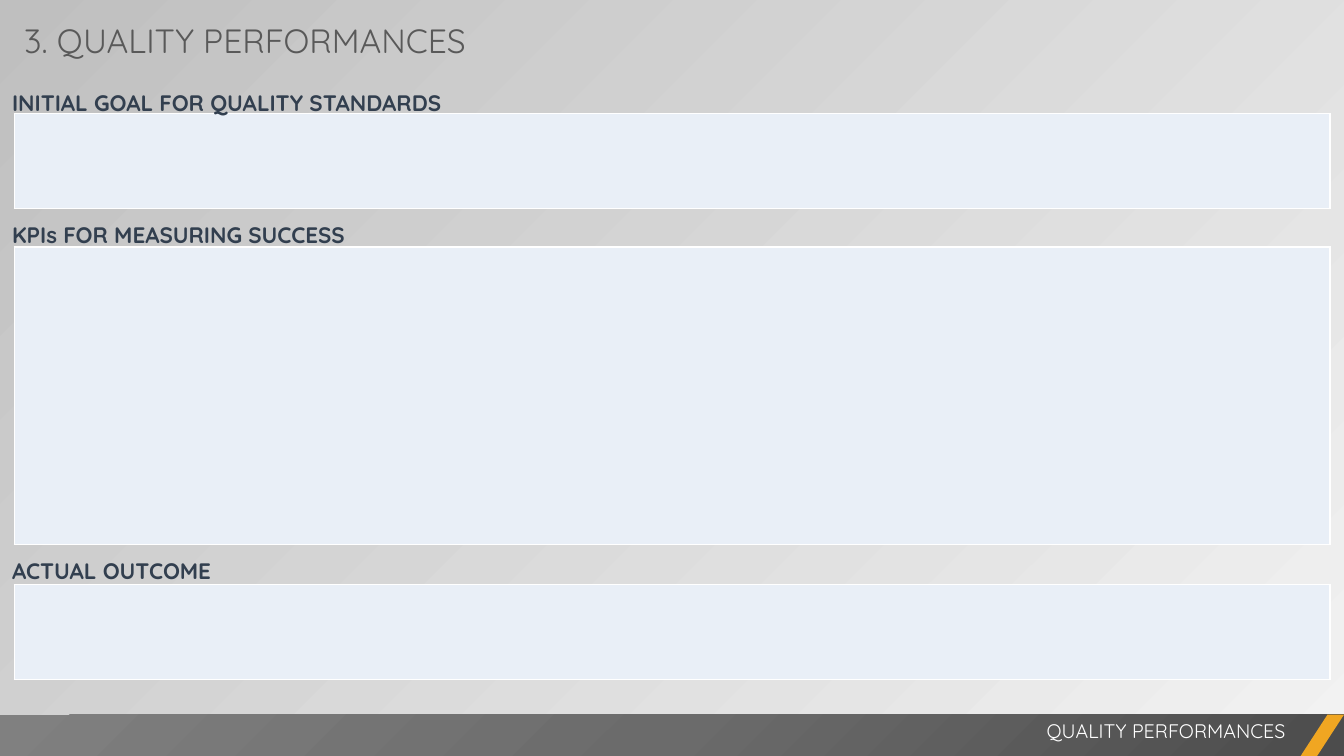
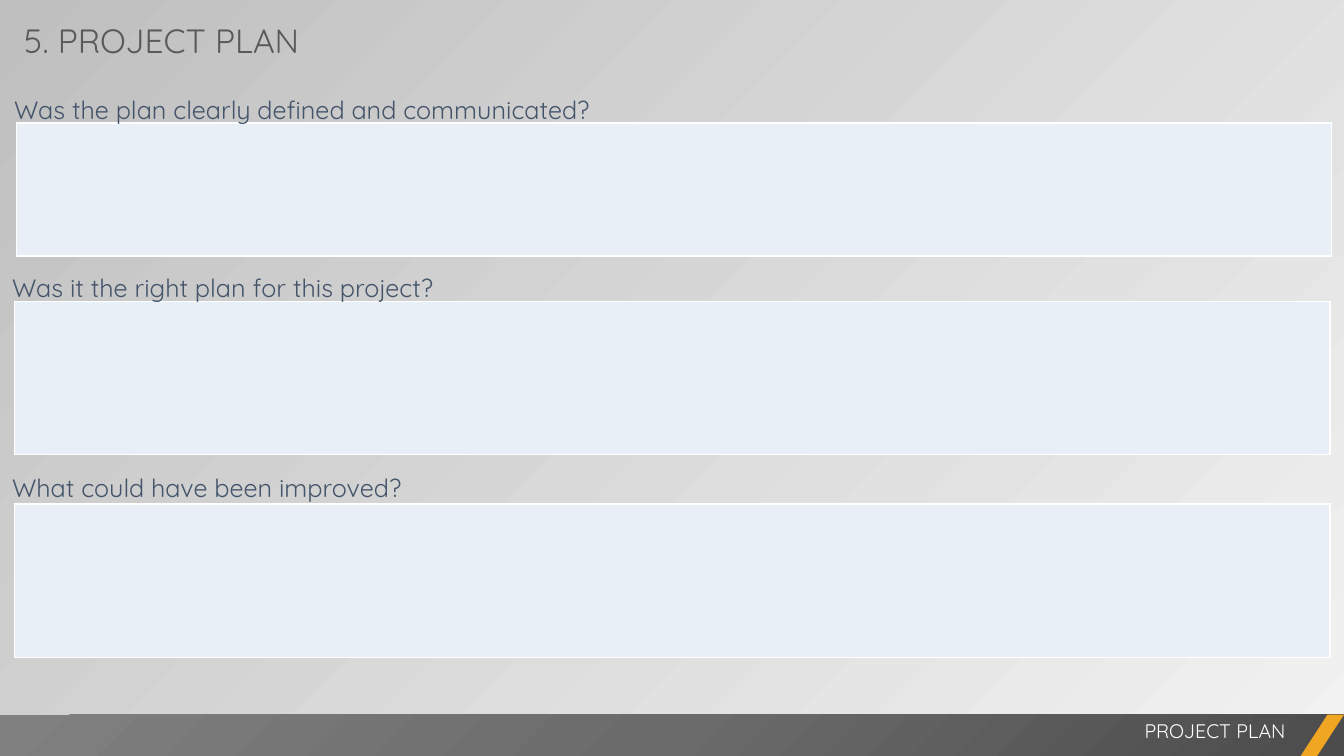
import dataclasses
import pptx
import pptx.util
import pptx.dml.color
import pptx.enum.shapes
import pptx.enum.text
import pptx.oxml
import pptx.oxml.ns

Inches = pptx.util.Inches
Pt = pptx.util.Pt
Fit = pptx.enum.text.MSO_AUTO_SIZE
Align = pptx.enum.text.PP_ALIGN
Form = pptx.enum.shapes.MSO_SHAPE


@dataclasses.dataclass(frozen=True)
class Theme:
    font: str = "Quicksand"
    light: str = "F2F2F2"
    dark: str = "BFBFBF"
    panel: str = "E9EFF7"
    white: str = "FFFFFF"
    title: str = "595959"
    accent: str = "F0A622"
    band: tuple = ((0, "4C4C4C"), (50, "6B6B6B"), (100, "808080"))
    title_size: int = 24
    foot_size: int = 14


@dataclasses.dataclass(frozen=True)
class Style:
    size: int
    color: str
    bold: bool
    space: float


THEME = Theme()
CAPS = Style(16, "323F4F", True, 1.34)
ASK = Style(18, "44546A", False, 1.19)

WIDE, HIGH = 13.33, 7.5
EDGE = 0.14
PANEL_WIDE = 13.05
BAND_TOP = 7.09
BAND_HIGH = HIGH - BAND_TOP
SLASH_WIDE = 0.43

# fields: heading, heading top, heading width, panel left, panel top, panel height
PAGES = [
    {
        "title": "3. QUALITY PERFORMANCES",
        "width": 4.68,
        "footer": "QUALITY PERFORMANCES",
        "style": CAPS,
        "parts": [
            ("INITIAL GOAL FOR QUALITY STANDARDS", 0.73, 5.58, EDGE, 1.13, 0.94),
            ("KPIs FOR MEASURING SUCCESS", 2.04, 5.31, EDGE, 2.45, 2.95),
            ("ACTUAL OUTCOME", 5.38, 3.37, EDGE, 5.8, 0.94),
        ],
    },
    {
        "title": "5. PROJECT PLAN",
        "width": 2.98,
        "footer": "PROJECT PLAN",
        "style": ASK,
        "parts": [
            ("Was the plan clearly defined and communicated?", 0.82, 7.63, 0.16, 1.22, 1.32),
            ("Was it the right plan for this project?", 2.59, 7.63, EDGE, 2.99, 1.52),
            ("What could have been improved?", 4.57, 7.63, EDGE, 5, 1.52),
        ],
    },
]


def rgb(code):
    return pptx.dml.color.RGBColor.from_string(code)


def spot(*sizes):
    return [Inches(size) for size in sizes]


def write(frame, text, size, color, bold=False, align=Align.LEFT, space=None):
    frame.text = text
    line = frame.paragraphs[0]
    line.alignment = align
    if space:
        line.line_spacing = space
    font = line.runs[0].font
    font.name = THEME.font
    font.size = Pt(size)
    font.bold = bold
    font.color.rgb = rgb(color)


def add_text(slide, box, text, size, color, inset=(0.1, 0.05), **look):
    frame = slide.shapes.add_textbox(*spot(*box)).text_frame
    frame.word_wrap = True
    frame.auto_size = Fit.SHAPE_TO_FIT_TEXT
    frame.margin_left = frame.margin_right = Inches(inset[0])
    frame.margin_top = frame.margin_bottom = Inches(inset[1])
    write(frame, text, size, color, **look)


def add_title(slide, text, width):
    title = slide.shapes.title
    title.left, title.top, title.width, title.height = spot(EDGE, 0.15, width, 0.5)
    frame = title.text_frame
    frame.word_wrap = False
    frame.auto_size = Fit.NONE
    frame.vertical_anchor = pptx.enum.text.MSO_ANCHOR.TOP
    write(frame, text, THEME.title_size, THEME.title)


def add_panel(slide, left, top, height):
    box = spot(left, top, PANEL_WIDE, height)
    table = slide.shapes.add_table(1, 1, *box).table
    table.first_row = table.horz_banding = False
    cell = table.cell(0, 0)
    cell.fill.solid()
    cell.fill.fore_color.rgb = rgb(THEME.panel)
    props = cell.fill._xPr
    for place, side in enumerate("LRTB"):
        props.insert(place, pptx.oxml.parse_xml(
            f'<a:ln{side} {pptx.oxml.ns.nsdecls("a")} w="{Pt(1)}"><a:solidFill>'
            f'<a:srgbClr val="{THEME.white}"/></a:solidFill></a:ln{side}>'))


def add_shape(slide, form, *box):
    shape = slide.shapes.add_shape(form, *spot(*box))
    shape.shadow.inherit = False
    shape.line.fill.background()
    return shape


def add_footer(slide, text):
    band = add_shape(slide, Form.RECTANGLE, 0, BAND_TOP, WIDE, BAND_HIGH)
    stops = "".join(
        f'<a:gs pos="{place * 1000}"><a:srgbClr val="{color}"/></a:gs>'
        for place, color in THEME.band)
    band.fill.background()
    old = band._element.spPr.find(pptx.oxml.ns.qn("a:noFill"))
    old.getparent().replace(old, pptx.oxml.parse_xml(
        f'<a:gradFill {pptx.oxml.ns.nsdecls("a")}><a:gsLst>{stops}</a:gsLst>'
        '<a:path path="circle"><a:fillToRect l="100000" t="100000"/></a:path>'
        '</a:gradFill>'))
    slash = add_shape(slide, Form.PARALLELOGRAM, WIDE - SLASH_WIDE, BAND_TOP,
                      SLASH_WIDE, BAND_HIGH)
    slash.adjustments[0] = 0.65
    slash.fill.solid()
    slash.fill.fore_color.rgb = rgb(THEME.accent)
    add_text(slide, (5.25, 7.08, 7.6, 0.34), text, THEME.foot_size, THEME.white,
             align=Align.RIGHT)


def set_back(master):
    fill = master.background.fill
    fill.gradient()
    fill.gradient_angle = 135
    for stop, place, color in zip(fill.gradient_stops, (0, 1), (THEME.light, THEME.dark)):
        stop.position = place
        stop.color.rgb = rgb(color)


def add_page(deck, page):
    slide = deck.slides.add_slide(deck.slide_layouts[5])
    add_title(slide, page["title"], page["width"])
    style = page["style"]
    for text, head, width, left, top, height in page["parts"]:
        add_panel(slide, left, top, height)
        add_text(slide, (left - EDGE, head, width, 0.4), text, style.size, style.color,
                 inset=(0.12, 0.06), bold=style.bold, space=style.space)
    add_footer(slide, page["footer"])


def main():
    deck = pptx.Presentation()
    deck.slide_width, deck.slide_height = spot(WIDE, HIGH)
    set_back(deck.slide_master)
    for page in PAGES:
        add_page(deck, page)
    deck.save("out.pptx")


if __name__ == "__main__":
    main()
